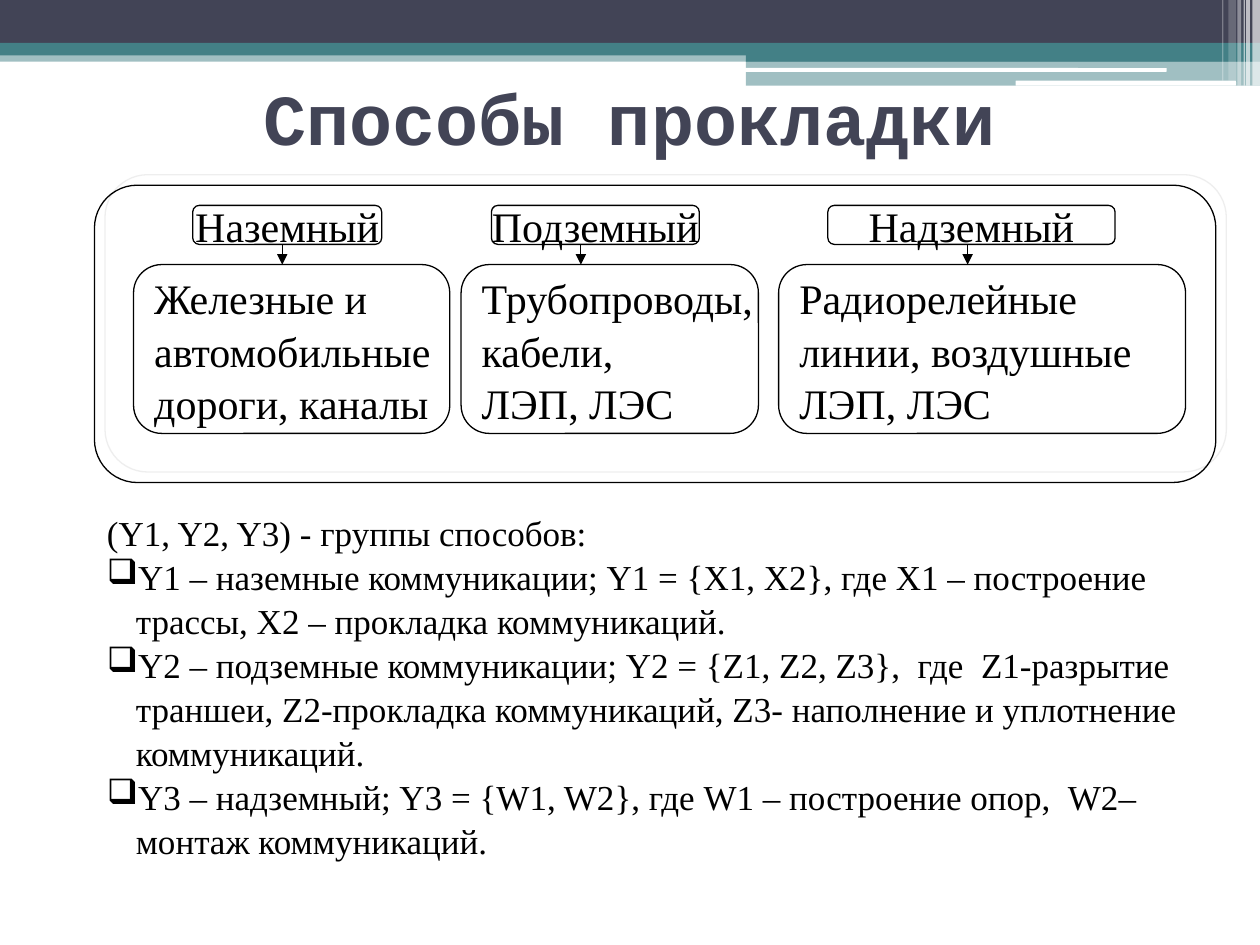
from lxml.etree import SubElement
from pptx import Presentation
from pptx.dml.color import RGBColor
from pptx.enum.shapes import MSO_CONNECTOR, MSO_SHAPE
from pptx.enum.text import MSO_ANCHOR, PP_ALIGN
from pptx.oxml.ns import qn
from pptx.util import Inches, Pt

NAVY, TEAL, WHITE, BLACK = "424456", "438086", "FFFFFF", "000000"
SERIF = "Times New Roman"
TITLE = "Способы прокладки"
BANDS = [
    (0, 0.4, 10, 0.09, TEAL, 50),
    (0, 0, 10, 0.34, NAVY, 100),
    (0, 0.34, 10, 0.1, TEAL, 100),
    (5.92, 0.39, 4.08, 0.1, TEAL, 100),
    (5.92, 0.48, 4.08, 0.2, TEAL, 50),
]
PILLS = [(5.91, 0.54, 3.35, 0.03), (8.06, 0.64, 1.75, 0.04)]
STRIPES = [
    (9.94, 0.06, 0.68, 65),
    (9.89, 0.03, 0.68, 65),
    (9.87, 0.01, 0.68, 60),
    (9.82, 0.03, 0.68, 40),
    (9.75, 0.06, 0.64, 20),
    (9.7, 0.01, 0.64, 30),
]
WAYS = [
    ("Наземный", 1.53, 1.5, 2.24, 1.06, 2.51,
     ["Железные и", "автомобильные", "дороги, каналы"]),
    ("Подземный", 3.9, 1.65, 4.61, 3.66, 2.36,
     ["Трубопроводы,", "кабели,", "ЛЭП, ЛЭС"]),
    ("Надземный", 6.57, 2.28, 7.68, 6.18, 3.23,
     ["Радиорелейные", "линии, воздушные", "ЛЭП, ЛЭС"]),
]
HEAD = "(Y1, Y2, Y3) - группы способов:"
GROUPS = [
    "Y1 – наземные коммуникации; Y1 = {X1, X2}, где Х1 – построение трассы, "
    "Х2 – прокладка коммуникаций.",
    "Y2 – подземные коммуникации; Y2 = {Z1, Z2, Z3},  где  Z1-разрытие траншеи, "
    "Z2-прокладка коммуникаций, Z3- наполнение и уплотнение коммуникаций.",
    "Y3 – надземный; Y3 = {W1, W2}, где W1 – построение опор,  "
    "W2– монтаж коммуникаций.",
]
LEFT, WIDE = 0.75, 8.9
TOP, TALL, BOX, DEEP = 1.63, 0.31, 2.1, 1.34


def color(code):
    return RGBColor.from_string(code)


def shape(kind, x, y, w, h):
    item = slide.shapes.add_shape(kind, *map(Inches, (x, y, w, h)))
    item.shadow.inherit = False
    return item


def band(x, y, w, h, code, alpha=100, kind=MSO_SHAPE.RECTANGLE):
    item = shape(kind, x, y, w, h)
    item.fill.solid()
    item.fill.fore_color.rgb = color(code)
    item.line.fill.background()
    if alpha < 100:
        tone = item.fill._xPr.find(qn("a:solidFill"))[0]
        SubElement(tone, qn("a:alpha"), val=str(alpha * 1000))


def write(frame, lines, size, align=PP_ALIGN.LEFT, font=SERIF, code=BLACK, space=1.05):
    frame.text = "\n".join(lines)
    for para in frame.paragraphs:
        para.alignment, para.line_spacing = align, space
        para.font.size, para.font.name = Pt(size), font
        para.font.color.rgb = color(code)


def frame(x, y, w, h, lines=(), align=PP_ALIGN.LEFT, round=0.167):
    item = shape(MSO_SHAPE.ROUNDED_RECTANGLE, x, y, w, h)
    item.adjustments[0] = round
    item.fill.background()
    item.line.color.rgb = color(BLACK)
    item.line.width = Pt(0.75)
    if lines:
        item.text_frame.word_wrap = False
        item.text_frame.vertical_anchor = MSO_ANCHOR.MIDDLE
        write(item.text_frame, lines, 24, align)
    return item


def arrow(x, top, end):
    item = slide.shapes.add_connector(
        MSO_CONNECTOR.STRAIGHT, *map(Inches, (x, top, x, end)))
    item.line.color.rgb = color(BLACK)
    item.line.width = Pt(0.75)
    SubElement(item.line._get_or_add_ln(), qn("a:tailEnd"), type="triangle")
    SubElement(item._element.spPr, qn("a:effectLst"))


def bullet(para, mark):
    props = para._p.get_or_add_pPr()
    props.set("marL", str(Inches(0.23)))
    props.set("indent", str(-Inches(0.23)))
    if mark:
        tone = SubElement(props, qn("a:buClr"))
        SubElement(tone, qn("a:srgbClr"), val=BLACK)
        SubElement(props, qn("a:buChar"), char=mark)
        props.append(props.find(qn("a:defRPr")))


deck = Presentation()
deck.slide_width, deck.slide_height = Inches(10), Inches(7.5)
slide = deck.slides.add_slide(deck.slide_layouts[5])

for row in BANDS:
    band(*row)
for row in PILLS:
    band(*row, WHITE, kind=MSO_SHAPE.ROUNDED_RECTANGLE)
for x, w, h, alpha in STRIPES:
    band(x, 0, w, h, WHITE, alpha)

for name, x, w, stem, left, wide, lines in WAYS:
    frame(x, TOP, w, TALL, [name], PP_ALIGN.CENTER)
    frame(left, BOX, wide, DEEP, lines)
    arrow(stem, TOP + TALL, BOX)

outer = frame(LEFT, 1.47, WIDE, 2.36, round=0.144)
glow = SubElement(outer._element.spPr.find(qn("a:effectLst")), qn("a:outerShdw"),
                  dist=str(Pt(8.5)), dir=str(315 * 60000), algn="ctr", rotWithShape="0")
tone = SubElement(glow, qn("a:srgbClr"), val="DEDEDE")
SubElement(tone, qn("a:alpha"), val="50000")

body = slide.shapes.add_textbox(*map(Inches, (LEFT, 3.99, WIDE, 3.13))).text_frame
body.word_wrap = True
write(body, [HEAD] + GROUPS, 20)
for rank, para in enumerate(body.paragraphs):
    bullet(para, "❑" if rank else None)

title = slide.shapes.title
title.left, title.top, title.width, title.height = map(Inches, (0.5, 0.3, 9, 1.25))
title.text_frame.vertical_anchor = MSO_ANCHOR.MIDDLE
write(title.text_frame, [TITLE], 41, PP_ALIGN.CENTER, "Courier New", NAVY, 1)
title.text_frame.paragraphs[0].font.bold = True

deck.save("out.pptx")
